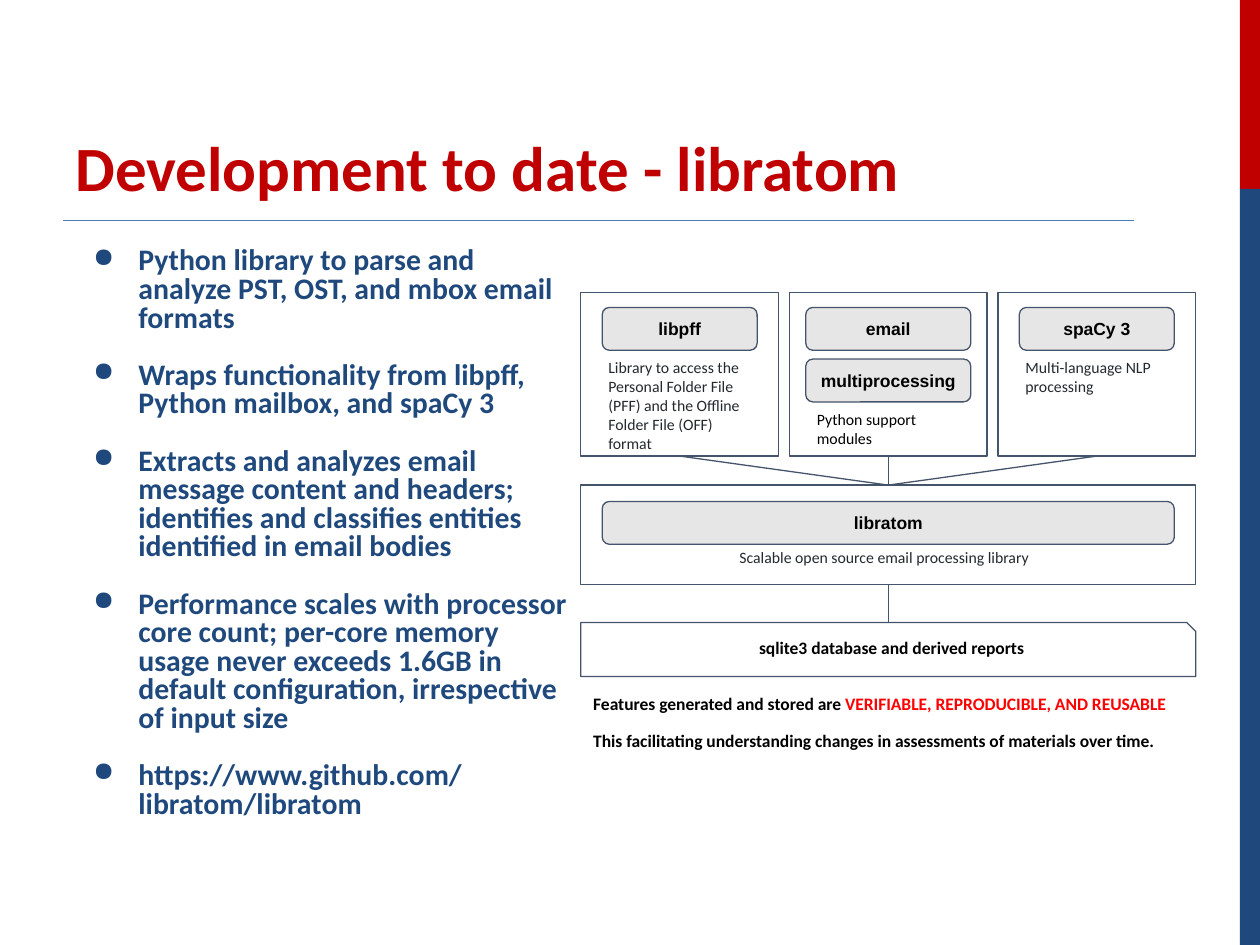
"""Build the libratom development slide with its library diagram."""
from lxml.etree import SubElement
from pptx import Presentation
from pptx.dml.color import RGBColor as RGB
from pptx.enum.shapes import MSO_CONNECTOR as LINK, MSO_SHAPE as SHAPE
from pptx.enum.text import MSO_ANCHOR as ANCHOR, PP_ALIGN as ALIGN
from pptx.oxml.ns import qn
from pptx.util import Inches as In, Pt

HUES = {"red": "C00000", "navy": "1F497D", "rule": "4A7DBA", "edge": "44546A",
        "chip": "E7E6E6", "ink": "24292E", "black": "000000", "alert": "FF0000"}
TITLE = "Development to date - libratom"
POINTS = [
    "Python library to parse and analyze PST, OST, and mbox email formats",
    "Wraps functionality from libpff, Python mailbox, and spaCy 3",
    "Extracts and analyzes email message content and headers; identifies and "
    "classifies entities identified in email bodies",
    "Performance scales with processor core count; per-core memory usage never "
    "exceeds 1.6GB in default configuration, irrespective of input size",
    "https://www.github.com/libratom/libratom",
]
PARTS = [
    (["libpff"], 0.17, "Library to access the Personal Folder File (PFF) and the "
     "Offline Folder File (OFF) format", "ink"),
    (["email", "multiprocessing"], 0.13, "Python support modules", "black"),
    (["spaCy 3"], 0.17, "Multi-language NLP processing", "ink"),
]
CORE = ("libratom", "Scalable open source email processing library")
STORE = "sqlite3 database and derived reports"
CLAIMS = [
    [("Features generated and stored are ", "black"),
     ("VERIFIABLE, REPRODUCIBLE, AND REUSABLE", "alert")],
    [("This facilitating understanding changes in assessments of materials "
      "over time.", "black")],
]
STYLES = {
    "title": {"name": "Calibri", "size": Pt(36), "bold": True},
    "point": {"name": "Calibri", "size": Pt(17), "bold": True},
    "chip": {"name": "Arial", "size": Pt(10), "bold": True},
    "note": {"name": "Calibri", "size": Pt(9), "bold": False},
    "claim": {"name": "Calibri", "size": Pt(10), "bold": True},
}
WIDE, HIGH = 10, 7.5
LEFT, SPAN, COL = 4.61, 4.88, 1.57
STEP = (SPAN - COL) / 2
MID = LEFT + SPAN / 2
TOP, TALL = 2.32, 1.3
CORE_Y, CORE_H = 3.85, 0.79
STORE_Y, STORE_H = 4.94, 0.43
CHIP_H, CHIP_STEP, PAD = 0.34, 0.41, 0.17

deck = Presentation()
deck.slide_width, deck.slide_height = In(WIDE), In(HIGH)
slide = deck.slides.add_slide(deck.slide_layouts[6])
shapes = slide.shapes


def hue(name):
    return RGB.from_string(HUES[name])


def write(para, runs, style):
    for text, color in runs:
        run = para.add_run()
        run.text = text
        for key, value in STYLES[style].items():
            setattr(run.font, key, value)
        run.font.color.rgb = hue(color)


def frame(shape, inset=0.1, anchor=ANCHOR.TOP):
    body = shape.text_frame
    look = {"word_wrap": True, "vertical_anchor": anchor, "margin_left": In(0.1),
            "margin_right": In(0.1), "margin_top": In(inset),
            "margin_bottom": In(inset)}
    for key, value in look.items():
        setattr(body, key, value)
    return body


def label(box, paras, style, inset=0.1, anchor=ANCHOR.TOP, align=ALIGN.LEFT,
          lead=1, gap=0, bullet=False):
    body = frame(shapes.add_textbox(*map(In, box)), inset, anchor)
    for i, runs in enumerate(paras):
        para = body.paragraphs[0] if i == 0 else body.add_paragraph()
        para.alignment, para.line_spacing = align, lead
        para.space_before = Pt(gap if i else 0)
        if bullet:
            mark(para)
        write(para, runs, style)


def mark(para):
    props = para._p.get_or_add_pPr()
    props.set("marL", str(In(0.5)))
    props.set("indent", str(-In(0.36)))
    color = SubElement(props, qn("a:buClr"))
    SubElement(color, qn("a:srgbClr"), val=HUES["navy"])
    SubElement(props, qn("a:buSzPct"), val="90000")
    SubElement(props, qn("a:buChar"), char="●")


def block(kind, box, fill=None, edge="edge"):
    shape = shapes.add_shape(kind, *map(In, box))
    shape.shadow.inherit = False
    if fill:
        shape.fill.solid()
        shape.fill.fore_color.rgb = hue(fill)
    else:
        shape.fill.background()
    if edge:
        shape.line.color.rgb, shape.line.width = hue(edge), Pt(0.75)
    else:
        shape.line.fill.background()
    return shape


def chip(text, x, y, w):
    shape = block(SHAPE.ROUNDED_RECTANGLE, (x, y, w, CHIP_H), "chip")
    para = frame(shape, anchor=ANCHOR.MIDDLE).paragraphs[0]
    para.alignment = ALIGN.CENTER
    write(para, [(text, "black")], "chip")


def link(x1, y1, x2, y2, color="edge", width=0.75):
    line = shapes.add_connector(LINK.STRAIGHT, *map(In, (x1, y1, x2, y2)))
    line.line.color.rgb, line.line.width = hue(color), Pt(width)
    SubElement(line._element.spPr, qn("a:effectLst"))


def main():
    band = HIGH / 5
    block(SHAPE.RECTANGLE, (9.84, 0, 0.16, band), "red", None)
    block(SHAPE.RECTANGLE, (9.84, band, 0.16, HIGH - band), "navy", None)
    link(0.5, 1.75, 9, 1.75, "rule", 1)
    label((0.5, 0.17, 8.5, 1.5), [[(TITLE, "red")]], "title", 0.05, ANCHOR.BOTTOM)
    label((0.5, 1.92, 4.11, 4.86), [[(text, "navy")] for text in POINTS], "point",
          0.05, lead=0.8, gap=16.4, bullet=True)

    for i, (names, pad, note, color) in enumerate(PARTS):
        x = LEFT + i * STEP
        block(SHAPE.RECTANGLE, (x, TOP, COL, TALL))
        for j, name in enumerate(names):
            chip(name, x + pad, TOP + 0.12 + j * CHIP_STEP, COL - 2 * pad)
        y = TOP + len(names) * CHIP_STEP + 0.01
        label((x + 0.12, y, 1.29, 0.79), [[(note, color)]], "note")
        link(x + COL / 2, TOP + TALL, MID, CORE_Y)

    name, note = CORE
    block(SHAPE.RECTANGLE, (LEFT, CORE_Y, SPAN, CORE_H))
    chip(name, LEFT + PAD, CORE_Y + 0.13, SPAN - 2 * PAD)
    label((5.77, 4.27, 2.56, 0.3), [[(note, "ink")]], "note")
    link(MID, CORE_Y + CORE_H, MID, STORE_Y)
    block(SHAPE.SNIP_1_RECTANGLE, (LEFT, STORE_Y, SPAN, STORE_H))
    label((5.23, 4.97, 3.69, 0.3), [[(STORE, "black")]], "claim",
          align=ALIGN.CENTER)
    label((LEFT, 5.42, SPAN, 0.62), CLAIMS, "claim", lead=0.9, gap=10.5)
    deck.save("out.pptx")


if __name__ == "__main__":
    main()
